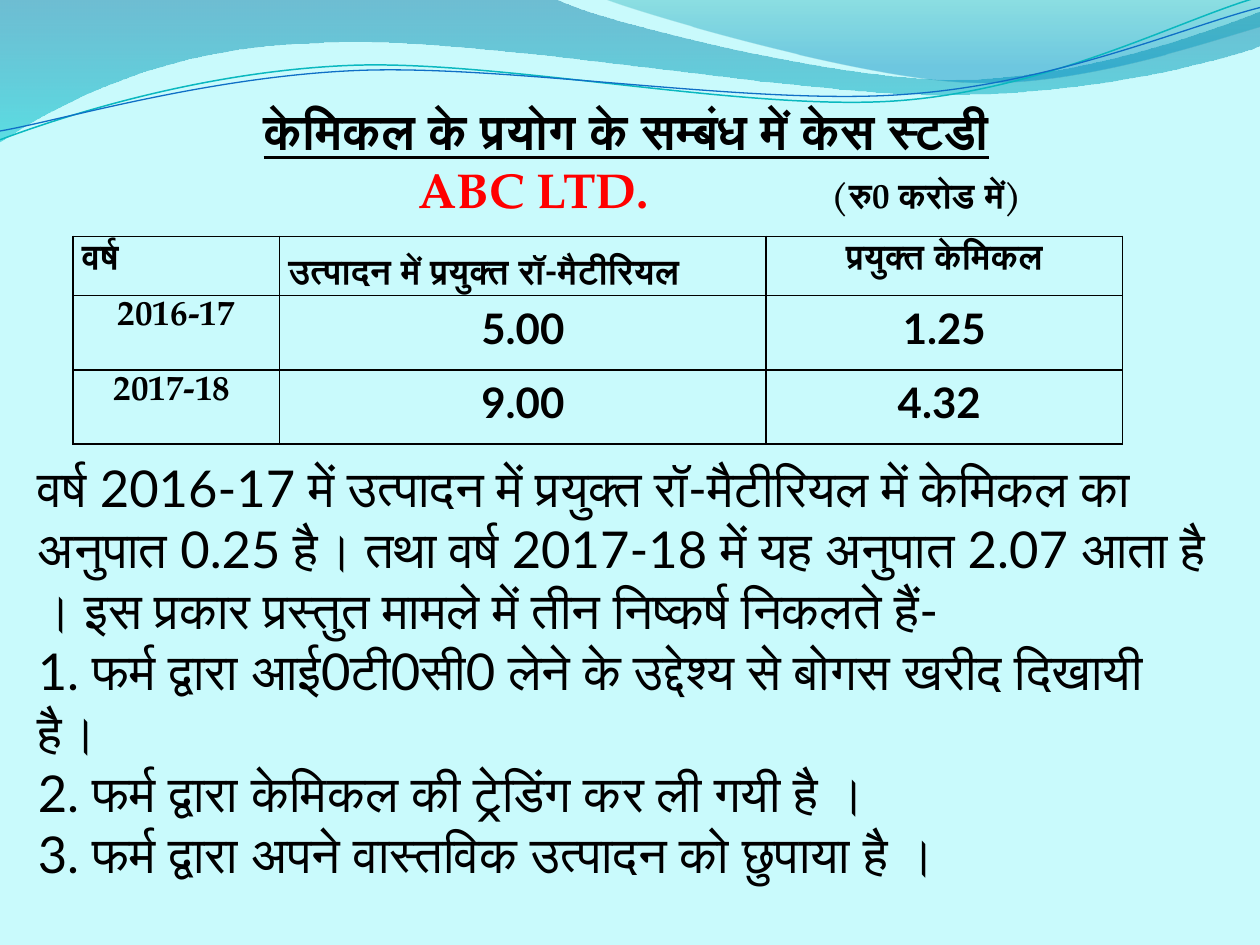
from lxml.etree import SubElement
from pptx import Presentation
from pptx.dml.color import RGBColor
from pptx.enum.text import MSO_ANCHOR, MSO_AUTO_SIZE, PP_ALIGN
from pptx.oxml.ns import qn
from pptx.util import Inches, Pt

SERIF, SANS = "TeX Gyre Pagella", "Lato"
BLACK, RED, PALE = "000000", "FF0000", "C9FAFC"
W, H = 10, 7.5

# Each wave: start point, then line ends (2 numbers) or cubic curves (6 numbers)
BANDS = [
    ([(0, 0), (4.4, -0.01), (4.76, 0.17, 6.64, 0.63, 7.58, 0.63),
      (8.53, 0.63, 9.58, 0.26, 10, 0.09), (10.01, 0.36),
      (9.83, 0.44, 8.7, 0.76, 7.46, 0.75), (6.22, 0.75, 3.82, 0.28, 2.57, 0.34),
      (1.29, 0.36, 0.46, 0.83, -0.01, 1.13), (0, 0)],
     [(0, "0074A1", 45), (1, "00C6CF", 55)]),
    ([(4.79, -0.01), (5.09, 0.11, 6.82, 0.62, 7.69, 0.65),
      (8.56, 0.69, 9.61, 0.32, 10, 0.21), (10, 0), (4.79, -0.01)],
     [(0, "00A1A9", 30), (0.8, "008BBF", 45)]),
]
STRANDS = [
    ([(0, 1.11), (0.48, 0.93, 1.58, 0.57, 2.77, 0.52),
      (3.95, 0.47, 5.93, 0.89, 7.13, 0.8), (8.33, 0.71, 9.38, 0.15, 9.98, -0.02)],
     "0AB8BF", 0.85),
    ([(0, 1.04), (0.47, 0.96, 1.64, 0.61, 2.83, 0.56),
      (4.03, 0.51, 5.97, 0.84, 7.17, 0.75), (8.36, 0.67, 9.41, 0.21, 10, 0.06)],
     "0F6FC6", 0.75),
]

ROWS = [
    ["वर्ष", "उत्पादन में प्रयुक्त रॉ-मैटीरियल", "प्रयुक्त केमिकल"],
    ["2016-17", "5.00", "1.25"],
    ["2017-18 ", "9.00", "4.32 "],
]
FINDINGS = [
    "वर्ष 2016-17 में उत्पादन में प्रयुक्त रॉ-मैटीरियल में केमिकल का अनुपात 0.25 है। "
    "तथा वर्ष 2017-18 में यह अनुपात 2.07 आता है । इस प्रकार प्रस्तुत मामले में तीन निष्कर्ष निकलते हैं-",
    "1. फर्म द्वारा आई0टी0सी0 लेने के उद्देश्य से बोगस खरीद दिखायी है।",
    "2. फर्म द्वारा केमिकल की ट्रेडिंग कर ली गयी है ।",
    "3. फर्म द्वारा अपने वास्तविक उत्पादन को छुपाया है ।",
]


def rgb(value):
    return RGBColor.from_string(value)


def set_all(obj, **values):
    for name, value in values.items():
        setattr(obj, name, value)


def add_run(p, text, size, font, color=BLACK, **extra):
    r = p.add_run()
    r.text = text
    set_all(r.font, size=Pt(size), name=font, **extra)
    r.font.color.rgb = rgb(color)


def add_wave(s, path, close):
    """Build the outline through the end points, then bend its curved parts."""
    segs = [[Inches(v) for v in seg] for seg in path]
    builder = s.shapes.build_freeform(*segs[0], scale=1.0)
    builder.add_line_segments([seg[-2:] for seg in segs[1:]], close=close)
    sp = builder.convert_to_shape()
    sp.shadow.inherit = False
    for line, seg in zip(list(sp.element.iter(qn("a:lnTo"))), segs[1:]):
        if len(seg) == 6:
            outline = line.getparent()
            curve = SubElement(outline, qn("a:cubicBezTo"))
            for x, y in zip(seg[::2], seg[1::2]):
                SubElement(curve, qn("a:pt"), x=str(x - sp.left), y=str(y - sp.top))
            outline.replace(line, curve)
    return sp


def add_header_waves(s):
    for path, stops in BANDS:
        sp = add_wave(s, path, True)
        sp.line.fill.background()
        sp.fill.gradient()
        sp.fill.gradient_angle = 270
        for stop, (pos, color, _) in zip(sp.fill.gradient_stops, stops):
            stop.position = pos
            stop.color.rgb = rgb(color)
        gradient = sp.element.spPr.find(qn("a:gradFill"))
        for clr, (_, _, alpha) in zip(gradient.iter(qn("a:srgbClr")), stops):
            SubElement(clr, qn("a:alpha"), val=str(alpha * 1000))
    for path, color, width in STRANDS:
        sp = add_wave(s, path, False)
        sp.fill.background()
        sp.line.color.rgb = rgb(color)
        sp.line.width = Pt(width)


def place_text(s, ph, box):
    """Put a placeholder in its box, in front of what is drawn so far."""
    s.shapes.element.append(ph.element)
    set_all(ph, **dict(zip(("left", "top", "width", "height"), map(Inches, box))))
    tf = ph.text_frame
    set_all(tf, word_wrap=True, auto_size=MSO_AUTO_SIZE.NONE,
            vertical_anchor=MSO_ANCHOR.TOP)
    return tf


def add_heading(s, box):
    tf = place_text(s, s.shapes.title, box)
    p = tf.paragraphs[0]
    p.alignment = PP_ALIGN.CENTER
    add_run(p, "केमिकल के प्रयोग के सम्बंध में केस स्टडी", 28, SERIF, bold=True, underline=True)
    # Company and unit sit on two tab stops
    p = tf.add_paragraph()
    p.alignment = PP_ALIGN.LEFT
    tabs = SubElement(p._p.get_or_add_pPr(), qn("a:tabLst"))
    for stop in (3, 6.28):
        SubElement(tabs, qn("a:tab"), pos=str(Inches(stop)), algn="l")
    add_run(p, "\tABC LTD.", 28, SERIF, RED, bold=True)
    add_run(p, "\t(रु0 करोड में)", 20, SERIF, bold=True)


def add_borders(cell):
    tcPr = cell._tc.get_or_add_tcPr()
    for i, side in enumerate(("lnL", "lnR", "lnT", "lnB")):
        ln = SubElement(tcPr, qn("a:" + side), w=str(Pt(1)))
        fill = SubElement(ln, qn("a:solidFill"))
        SubElement(fill, qn("a:srgbClr"), val=BLACK)
        tcPr.insert(i, ln)


def add_usage_table(s, box, col_widths, row_heights):
    table = s.shapes.add_table(len(ROWS), len(ROWS[0]), *map(Inches, box)).table
    set_all(table, first_row=False, horz_banding=False)
    for col, width in zip(table.columns, col_widths):
        col.width = Inches(width)
    for row, height in zip(table.rows, row_heights):
        row.height = Inches(height)
    for i, texts in enumerate(ROWS):
        for j, text in enumerate(texts):
            cell = table.cell(i, j)
            drop = 0.06 if (i, j) == (0, 1) else 0
            set_all(cell, margin_left=Inches(0.07), margin_right=Inches(0.07),
                    margin_top=Inches(drop), margin_bottom=0,
                    vertical_anchor=MSO_ANCHOR.TOP)
            cell.fill.background()
            add_borders(cell)
            p = cell.text_frame.paragraphs[0]
            left = i == 0 and j < 2
            set_all(p, line_spacing=1.15,
                    alignment=PP_ALIGN.LEFT if left else PP_ALIGN.CENTER)
            add_run(p, text, 24 if i and j else 20,
                    SERIF if i and not j else SANS, bold=True)


def add_findings(s, box):
    tf = place_text(s, s.placeholders[1], box)
    for i, text in enumerate(FINDINGS):
        p = tf.add_paragraph() if i else tf.paragraphs[0]
        set_all(p, space_before=Pt(0), alignment=PP_ALIGN.LEFT)
        pPr = p._p.get_or_add_pPr()
        pPr.set("marL", "0")
        pPr.set("indent", "0")
        SubElement(pPr, qn("a:buNone"))
        add_run(p, text, 29, SANS)


def main():
    prs = Presentation()
    prs.slide_width, prs.slide_height = Inches(W), Inches(H)
    s = prs.slides.add_slide(prs.slide_layouts[1])
    s.background.fill.solid()
    s.background.fill.fore_color.rgb = rgb(PALE)
    add_header_waves(s)
    add_heading(s, (0.022 * W, 0.1 * H, 0.95 * W, 0.14 * H))
    add_usage_table(s, (0.058 * W, 0.25 * H, 0.83 * W, 0.22 * H),
                    (1.64, 3.86, 2.83), (0.47, 0.59, 0.59))
    add_findings(s, (0.02 * W, 0.477 * H, 0.95 * W, 0.47 * H))
    prs.save("out.pptx")


if __name__ == "__main__":
    main()
